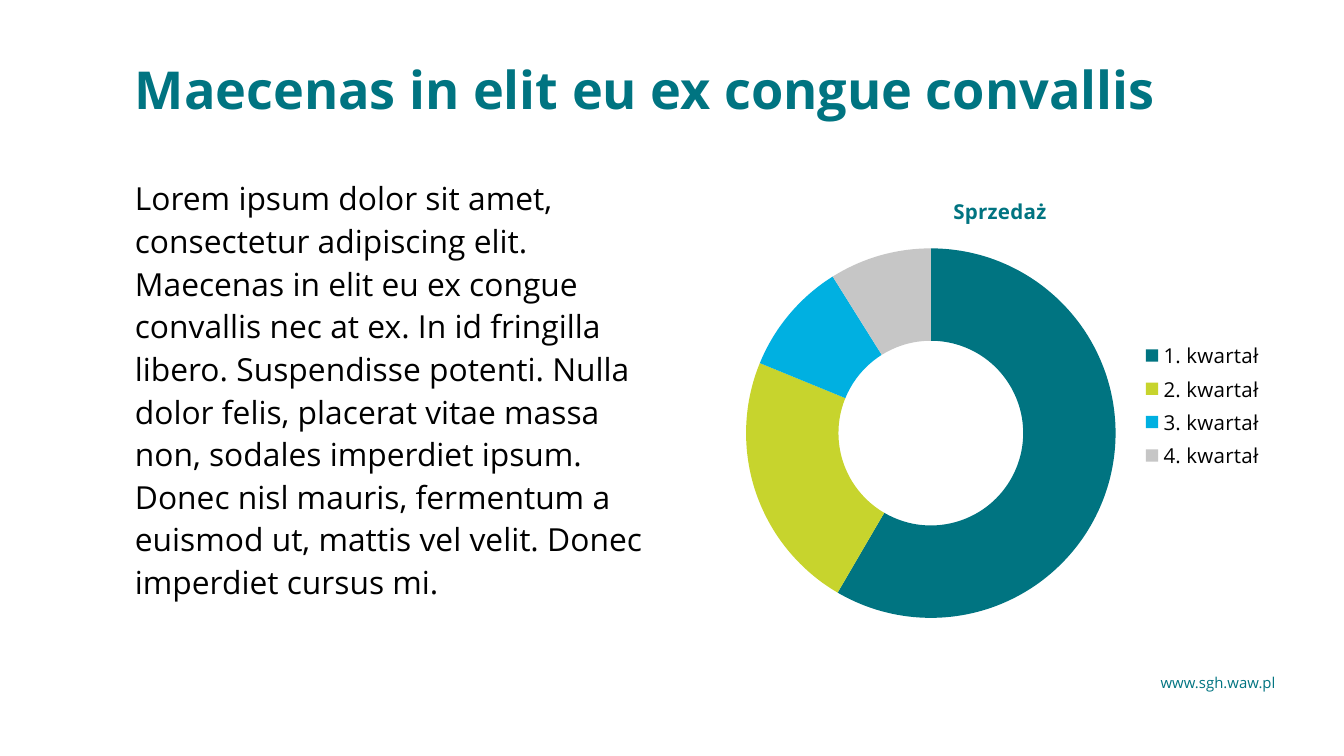
from lxml import etree
from pptx import Presentation
from pptx.chart.data import CategoryChartData
from pptx.dml.color import RGBColor
from pptx.enum.chart import XL_CHART_TYPE, XL_LEGEND_POSITION
from pptx.oxml.ns import qn
from pptx.util import Pt

DOUGHNUT = XL_CHART_TYPE.DOUGHNUT
LEGEND_RIGHT = XL_LEGEND_POSITION.RIGHT

TEAL = RGBColor(0x00, 0x74, 0x81)
LIME = RGBColor(0xC7, 0xD4, 0x2D)
BLUE = RGBColor(0x00, 0xB0, 0xE1)
GREY = RGBColor(0xC6, 0xC6, 0xC6)
BLACK = RGBColor(0, 0, 0)
FONT = "Open Sans"

BODY = (
    "Lorem ipsum dolor sit amet, consectetur adipiscing elit. "
    "Maecenas in elit eu ex congue convallis nec at ex. In id fringilla libero. "
    "Suspendisse potenti. Nulla dolor felis, placerat vitae massa non, sodales "
    "imperdiet ipsum. Donec nisl mauris, fermentum a euismod ut, mattis vel velit. "
    "Donec imperdiet cursus mi."
)
QUARTERS = [
    ("1. kwartał", 59, TEAL),
    ("2. kwartał", 23, LIME),
    ("3. kwartał", 10, BLUE),
    ("4. kwartał", 9, GREY),
]


def style_font(font, size, color, bold=False):
    font.name = FONT
    font.size = Pt(size)
    font.bold = bold
    font.color.rgb = color


def add_text(slide, text, left, top, width, height, *, size, color=TEAL,
             bold=False, line_spacing=None, wrap=True):
    box = slide.shapes.add_textbox(Pt(left), Pt(top), Pt(width), Pt(height))
    frame = box.text_frame
    frame.word_wrap = wrap
    frame.margin_left = frame.margin_top = 0
    frame.margin_right = frame.margin_bottom = 0
    paragraph = frame.paragraphs[0]
    if line_spacing:
        paragraph.line_spacing = line_spacing
    run = paragraph.add_run()
    run.text = text
    style_font(run.font, size, color, bold)


def place_plot(chart, **fractions):
    """Fix the inner plot area, in fractions of the chart frame."""
    plot_area = chart.element.find(".//" + qn("c:plotArea"))
    for layout in plot_area.findall(qn("c:layout")):
        plot_area.remove(layout)
    layout = etree.Element(qn("c:layout"))
    plot_area.insert(0, layout)
    manual = etree.SubElement(layout, qn("c:manualLayout"))
    settings = {"layoutTarget": "inner", "xMode": "edge", "yMode": "edge", **fractions}
    for name, value in settings.items():
        etree.SubElement(manual, qn("c:" + name)).set("val", str(value))


def add_sales_chart(slide, left, top, width, height):
    names, values, colors = zip(*QUARTERS)
    data = CategoryChartData()
    data.categories = names
    data.add_series("Sprzedaż", values)
    frame = slide.shapes.add_chart(
        DOUGHNUT, Pt(left), Pt(top), Pt(width), Pt(height), data)
    chart = frame.chart
    style_font(chart.font, 11, BLACK)

    chart.has_title = True
    title = chart.chart_title
    title.include_in_layout = False
    title.text_frame.text = "Sprzedaż"
    style_font(title.text_frame.paragraphs[0].runs[0].font, 11, TEAL, bold=True)

    chart.has_legend = True
    chart.legend.position = LEGEND_RIGHT
    chart.legend.include_in_layout = False
    style_font(chart.legend.font, 11, BLACK)

    series = chart.plots[0].series[0]
    for index, color in enumerate(colors):
        point_format = series.points[index].format
        point_format.fill.solid()
        point_format.fill.fore_color.rgb = color
        point_format.line.fill.background()
    place_plot(chart, x=0.04, y=0.16, w=0.67, h=0.8)


def main():
    presentation = Presentation()
    presentation.slide_width = Pt(720)
    presentation.slide_height = Pt(405)
    slide = presentation.slides.add_slide(presentation.slide_layouts[6])
    add_text(slide, "www.sgh.waw.pl", 621.75, 361, 63, 10, size=8, wrap=False)
    add_text(slide, "Maecenas in elit eu ex congue convallis", 72.25, 30.5, 612, 53,
             size=28, bold=True)
    add_text(slide, BODY, 72.25, 93.5, 281.5, 248, size=17, color=BLACK,
             line_spacing=1.12)
    add_sales_chart(slide, 387.5, 93.5, 296.5, 247.5)
    presentation.save("out.pptx")


if __name__ == "__main__":
    main()
